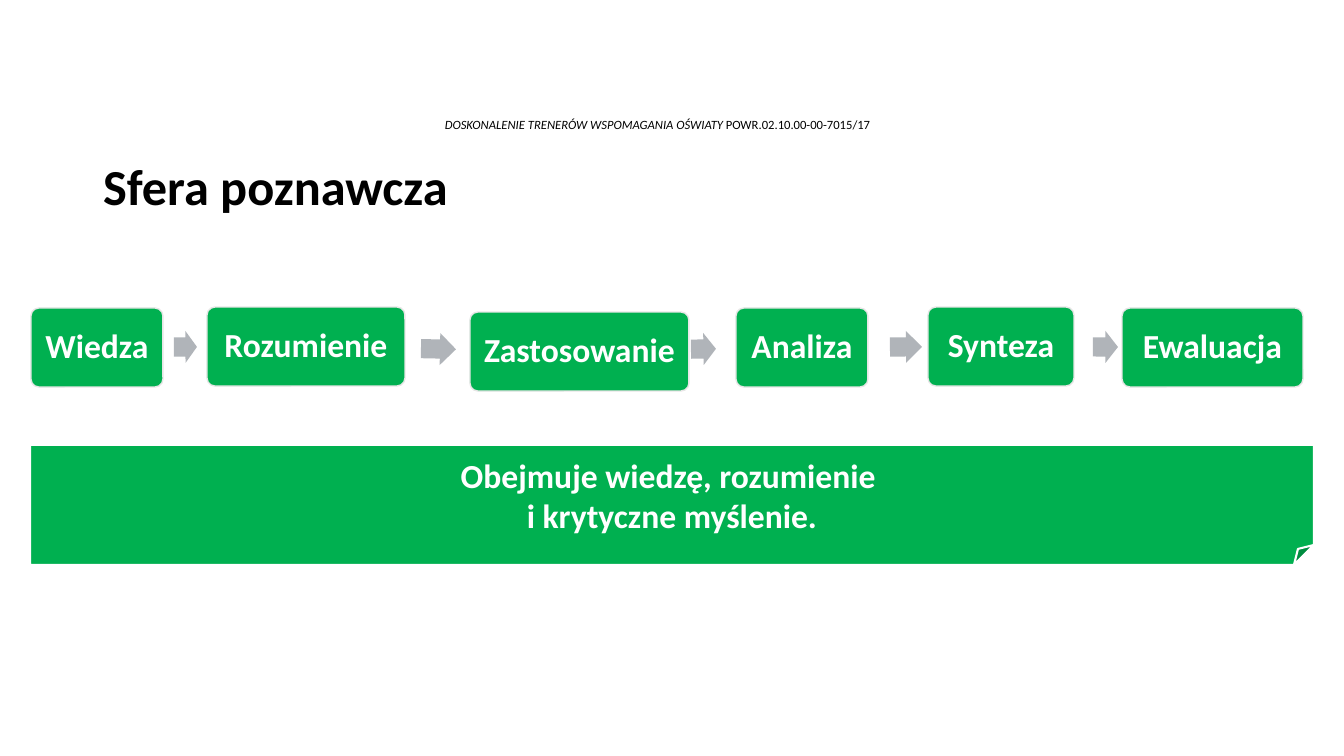
from pptx import Presentation
from pptx import util as u
from pptx.dml.color import RGBColor
from pptx.enum import shapes, text

PX = 914400 / 100.8
GREEN, ARROW_GREY, EDGE_GREY = "00B050", "B0B4B9", "E7E6E6"
WHITE, BLACK = "FFFFFF", "000000"

# Stage name, left, top, width
STAGES = [
    ("Wiedza", 31, 308, 132),
    ("Rozumienie", 207, 307, 198),
    ("Zastosowanie", 470, 312, 219),
    ("Analiza", 736, 308, 132),
    ("Synteza", 928, 307, 146),
    ("Ewaluacja", 1122, 308, 181),
]
# Left, top, width, rotation of the arrow after each stage but the last
STEPS = [
    (174, 331, 23, 359.7),
    (421, 333, 35, 1.1),
    (691, 333, 25, 359),
    (890, 331, 32, 359.6),
    (1093, 331, 25, 0.2),
]
STAGE_HEIGHT, STEP_HEIGHT = 79, 32


def px(*lengths):
    return [u.Emu(round(length * PX)) for length in lengths]


def colour(value):
    return RGBColor.from_string(value)


def write(frame, content, size=24, ink=WHITE, bold=False, italic=False,
          align=text.PP_ALIGN.CENTER, spacing=1.0):
    """Append content to the first paragraph; a newline is a line break."""
    paragraph = frame.paragraphs[0]
    paragraph.alignment = align
    paragraph.line_spacing = spacing
    for number, line in enumerate(content.split("\n")):
        if number:
            paragraph.add_line_break()
        run = paragraph.add_run()
        run.text = line
        font = run.font
        font.name, font.size = "Calibri", u.Pt(size)
        font.bold, font.italic = bold, italic
        font.color.rgb = colour(ink)


def clear_margins(frame):
    frame.margin_left = frame.margin_right = 0
    frame.margin_top = frame.margin_bottom = 0
    frame.vertical_anchor = text.MSO_ANCHOR.MIDDLE


def add_figure(slide, preset, box, fill, edge=None, edge_width=1.0):
    figure = slide.shapes.add_shape(preset, *px(*box))
    figure.shadow.inherit = False
    figure.fill.solid()
    figure.fill.fore_color.rgb = colour(fill)
    if edge:
        figure.line.color.rgb = colour(edge)
        figure.line.width = u.Pt(edge_width)
    else:
        figure.line.fill.background()
    return figure


def add_project_header(slide, box):
    frame = slide.shapes.add_textbox(*px(*box)).text_frame
    frame.word_wrap = True
    clear_margins(frame)
    write(frame, "DOSKONALENIE TRENERÓW WSPOMAGANIA OŚWIATY ", size=9,
          ink=BLACK, italic=True, spacing=0.9)
    write(frame, "POWR.02.10.00-00-7015/17", size=9, ink=BLACK, spacing=0.9)


def place_title(slide, box):
    title = slide.shapes.title
    title.left, title.top, title.width, title.height = px(*box)
    frame = title.text_frame
    frame.word_wrap = False
    frame.auto_size = text.MSO_AUTO_SIZE.NONE
    frame.vertical_anchor = text.MSO_ANCHOR.TOP
    write(frame, "Sfera poznawcza", size=36, ink=BLACK, bold=True,
          align=text.PP_ALIGN.LEFT)


def add_stage(slide, name, box):
    stage = add_figure(slide, shapes.MSO_SHAPE.ROUNDED_RECTANGLE, box,
                       GREEN, EDGE_GREY)
    stage.adjustments[0] = 0.1
    clear_margins(stage.text_frame)
    stage.text_frame.word_wrap = False
    write(stage.text_frame, name, bold=True, spacing=0.9)


def add_step(slide, box, rotation):
    step = add_figure(slide, shapes.MSO_SHAPE.RIGHT_ARROW, box, ARROW_GREY)
    step.adjustments[0], step.adjustments[1] = 0.6, 0.5
    step.rotation = rotation


def add_summary(slide, box):
    summary = add_figure(slide, shapes.MSO_SHAPE.FOLDED_CORNER, box,
                         GREEN, WHITE, 1.5)
    summary.text_frame.word_wrap = True
    summary.text_frame.vertical_anchor = text.MSO_ANCHOR.MIDDLE
    write(summary.text_frame,
          "Obejmuje wiedzę, rozumienie \ni krytyczne myślenie.", bold=True)


def main():
    deck = Presentation()
    deck.slide_width, deck.slide_height = px(1344, 756)
    slide = deck.slides.add_slide(deck.slide_layouts[5])

    # Header and title
    add_project_header(slide, (80, 115, 1155, 20))
    place_title(slide, (93, 150, 369, 72))

    # Chain of cognitive stages
    for name, left, top, width in STAGES:
        add_stage(slide, name, (left, top, width, STAGE_HEIGHT))
    for left, top, width, rotation in STEPS:
        add_step(slide, (left, top, width, STEP_HEIGHT), rotation)

    # Summary banner
    add_summary(slide, (30, 445, 1284, 120))
    deck.save("out.pptx")


if __name__ == "__main__":
    main()
